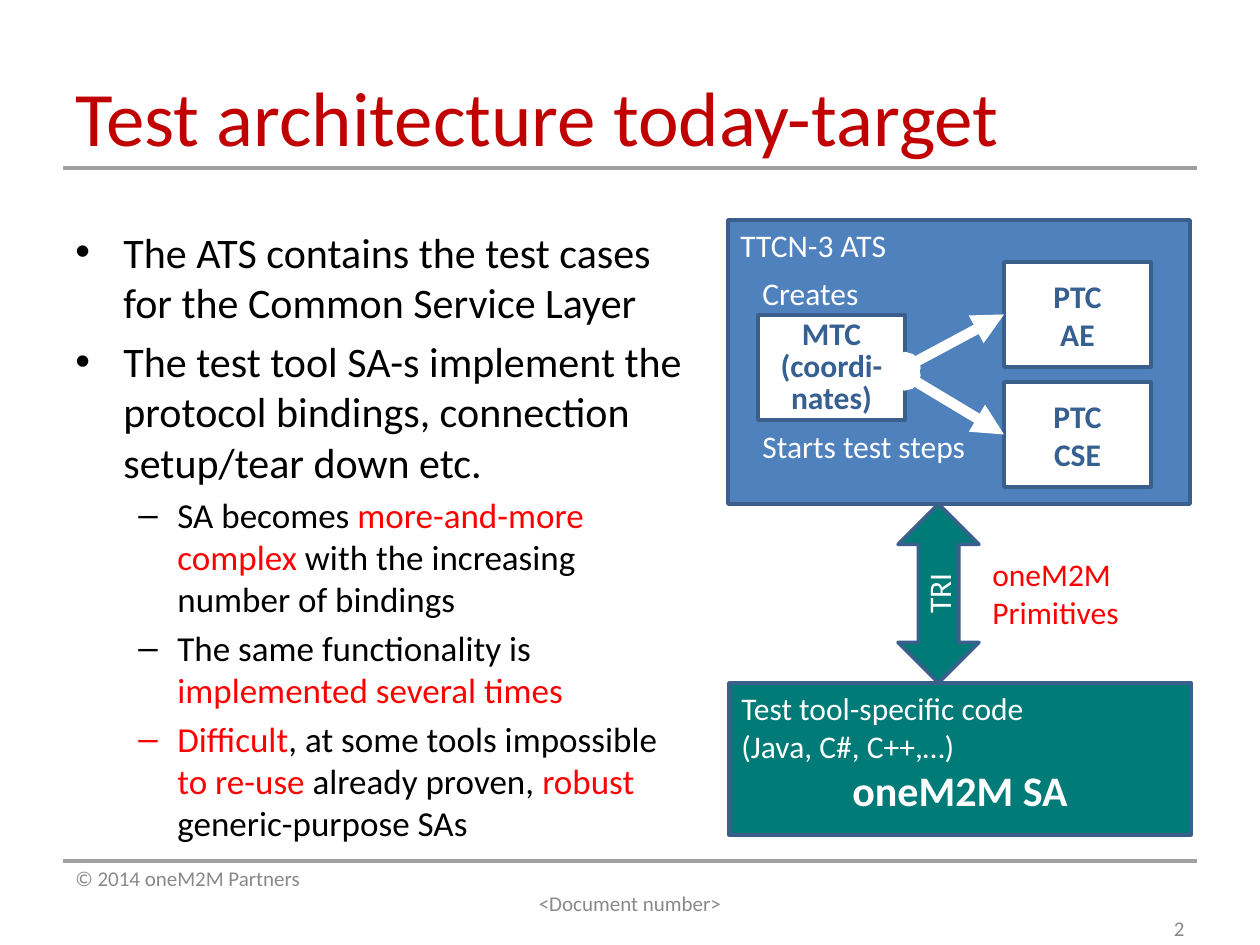
from lxml.etree import SubElement
from pptx import Presentation
from pptx.dml.color import RGBColor
from pptx.enum.shapes import MSO_CONNECTOR as Connector, MSO_SHAPE as Shape
from pptx.enum.text import MSO_ANCHOR as Anchor, MSO_AUTO_SIZE as AutoSize, PP_ALIGN as Align
from pptx.oxml.ns import qn
from pptx.util import Emu, Pt

SCALE = 914400 / 126
FONT = "Calibri"
WHITE, BLACK, RED, TITLE_RED = "FFFFFF", "000000", "FF0000", "C00000"
GREY, RULE_GREY = "898989", "A0A0A3"
BLUE, DARK_BLUE, OUTLINE, TEAL = "4F81BD", "376092", "3A5F8C", "007B78"
BULLETS = {24: ("•", 48, 48), 20: ("–", 102, 39)}
BODY = [
    (24, [("The ATS contains the test cases for the Common Service Layer", BLACK)]),
    (24, [("The test tool SA-s implement the protocol bindings, connection setup/tear down etc.", BLACK)]),
    (20, [("SA becomes ", BLACK), ("more-and-more complex", RED),
          (" with the increasing number of bindings", BLACK)]),
    (20, [("The same functionality is ", BLACK), ("implemented several times", RED)]),
    (20, [("Difficult", RED), (", at some tools impossible ", BLACK), ("to re-use", RED),
          (" already proven, ", BLACK), ("robust", RED), (" generic-purpose SAs", BLACK)]),
]


def px(length):
    """Turn whole pixels into EMU."""
    return Emu(round(length * SCALE))


def color(value):
    """Turn a hex string into a colour."""
    return RGBColor.from_string(value)


def apply(target, formats):
    """Set each format value on the target."""
    for name, value in formats.items():
        setattr(target, name, value)


def add_spans(para, spans, size=18, bold=False):
    """Add coloured spans to a paragraph, breaking lines at newlines."""
    for text, tint in spans:
        for index, line in enumerate(text.split("\n")):
            if index:
                para.add_line_break()
            span = para.add_run()
            span.text = line
            apply(span.font, {"name": FONT, "size": Pt(size), "bold": bold})
            span.font.color.rgb = color(tint)


def add_para(frame, text, tint, size=18, bold=False, **formats):
    """Add one paragraph to a frame, using the empty first one if it is free."""
    first = frame.paragraphs[0]
    para = frame.add_paragraph() if first.runs else first
    apply(para, formats)
    spans = [(text, tint)] if isinstance(text, str) else text
    add_spans(para, spans, size, bold)
    return para


def add_box(page, bounds, **formats):
    """Add a text box and return its frame."""
    frame = page.shapes.add_textbox(*map(px, bounds)).text_frame
    apply(frame, {"word_wrap": True, "vertical_anchor": Anchor.TOP, **formats})
    return frame


def add_block(page, bounds, fill, anchor=Anchor.TOP, kind=Shape.RECTANGLE):
    """Add a filled and outlined shape."""
    block = page.shapes.add_shape(kind, *map(px, bounds))
    block.shadow.inherit = False
    block.fill.solid()
    block.fill.fore_color.rgb = color(fill)
    block.line.color.rgb = color(OUTLINE)
    block.line.width = Pt(2)
    apply(block.text_frame, {"word_wrap": True, "vertical_anchor": anchor})
    return block


def add_component(page, left, top, text, spacing=1.0):
    """Add a white test component with a bold centred label."""
    block = add_block(page, (left, top, 147, 105), WHITE, Anchor.MIDDLE)
    add_para(block.text_frame, text, DARK_BLUE, bold=True,
             alignment=Align.CENTER, line_spacing=spacing)
    return block


def add_line(page, start, end, tint, width):
    """Add a straight line without a shadow."""
    line = page.shapes.add_connector(Connector.STRAIGHT, *map(px, start + end))
    line.line.color.rgb = color(tint)
    line.line.width = Pt(width)
    SubElement(line._element.spPr, qn("a:effectLst"))
    return line


def add_arrow(page, start, end, target):
    """Add a thick arrow from a round tail to the left side of its target."""
    arrow = add_line(page, start, end, WHITE, 6)
    outline = arrow.line._get_or_add_ln()
    for tag, kind in (("a:headEnd", "oval"), ("a:tailEnd", "triangle")):
        SubElement(outline, qn(tag), type=kind)
    arrow.end_connect(target, 1)
    return arrow


def add_bullets(page, bounds, items):
    """Add a bulleted list in two levels."""
    frame = add_box(page, bounds)
    for index, (size, spans) in enumerate(items):
        mark, margin, hanging = BULLETS[size]
        para = add_para(frame, spans, None, size, space_before=Pt(size / 5 if index else 0))
        properties = para._p.get_or_add_pPr()
        properties.set("marL", str(px(margin)))
        properties.set("indent", str(-px(hanging)))
        SubElement(properties, qn("a:buFont"), typeface="Arial")
        SubElement(properties, qn("a:buChar"), char=mark)


def add_frame_text(page):
    """Add the rules, title and footer."""
    for top in (861, 168):
        add_line(page, (63, top), (1197, top), RULE_GREY, 1.75)
    add_para(add_box(page, (63, 63, 1134, 158)), "Test architecture today-target", TITLE_RED, 44)
    footer = add_box(page, (63, 861, 1134, 84), vertical_anchor=Anchor.MIDDLE)
    for text, align in (("© 2014 oneM2M Partners", Align.LEFT),
                        ("<Document number>", Align.CENTER), ("2", Align.RIGHT)):
        add_para(footer, text, GREY, 12, alignment=align)


def add_diagram(page):
    """Add the test suite, the adapter and the link between them."""
    suite = add_block(page, (728, 220, 462, 284), BLUE)
    add_para(suite.text_frame, "TTCN-3 ATS", WHITE, alignment=Align.LEFT)
    adapter = add_block(page, (729, 683, 462, 152), TEAL).text_frame
    add_para(adapter, "Test tool-specific code\n(Java, C#, C++,…)", WHITE, alignment=Align.LEFT)
    add_para(adapter, "oneM2M SA", WHITE, 24, True, alignment=Align.CENTER)

    main_component = add_component(page, 758, 315, "MTC\n(coordi-nates)", 0.85)
    service = add_component(page, 1004, 382, "PTC\nCSE")
    application = add_component(page, 1004, 262, "PTC\nAE")

    link = add_block(page, (898, 504, 81, 179), TEAL, Anchor.MIDDLE, Shape.UP_DOWN_ARROW)
    link.text_frame._txBody.bodyPr.set("vert", "vert270")
    add_para(link.text_frame, "TRI", WHITE, alignment=Align.CENTER)
    growing = {"word_wrap": False, "auto_size": AutoSize.SHAPE_TO_FIT_TEXT}
    add_para(add_box(page, (980, 549, 152, 89), **growing), "oneM2M\nPrimitives", RED)

    add_arrow(page, (905, 368), (1004, 315), application).begin_connect(main_component, 3)
    add_arrow(page, (905, 375), (1004, 435), service)
    steps = add_box(page, (750, 268, 231, 204), **growing)
    add_para(steps, "Creates", WHITE)
    add_para(steps, "Starts test steps", WHITE, space_before=Pt(66))


def main():
    """Build and save the slide."""
    deck = Presentation()
    apply(deck, {"slide_width": px(1260), "slide_height": px(945)})
    page = deck.slides.add_slide(deck.slide_layouts[6])
    add_frame_text(page)
    add_bullets(page, (63, 220, 634, 662), BODY)
    add_diagram(page)
    deck.save("out.pptx")


if __name__ == "__main__":
    main()
